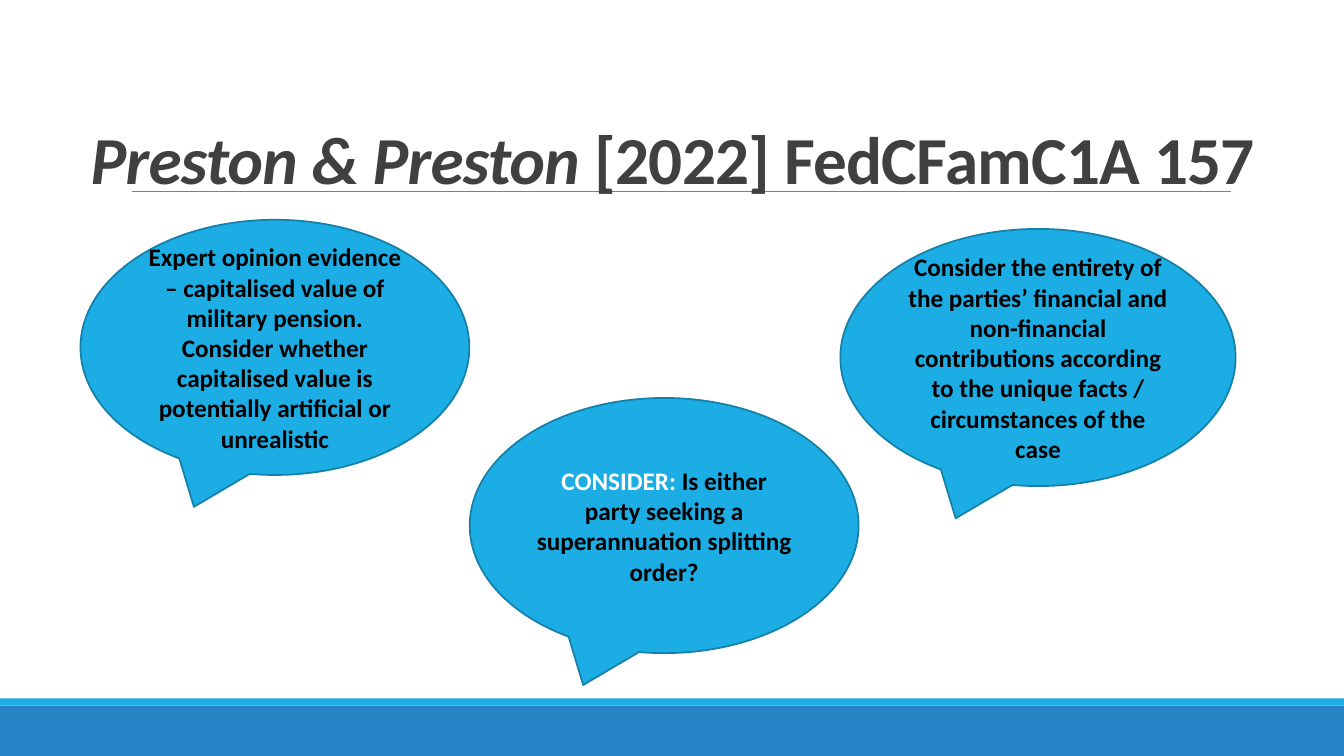
from dataclasses import dataclass

from lxml.etree import SubElement
from pptx import Presentation
from pptx.dml.color import RGBColor
from pptx.enum.shapes import MSO_CONNECTOR, MSO_SHAPE
from pptx.enum.text import MSO_ANCHOR, MSO_AUTO_SIZE, PP_ALIGN
from pptx.oxml.ns import qn
from pptx.slide import Slide
from pptx.text.text import _Paragraph, _Run
from pptx.util import Cm, Pt

COLORS = {
    "blue": "2683C6",
    "cyan": "1CADE4",
    "outline": "1580A9",
    "rule": "808080",
    "title": "404040",
    "black": "000000",
    "white": "FFFFFF",
}
FONT = "Calibri"
WIDTH, HEIGHT = 33.87, 19.05


@dataclass(frozen=True)
class Band:
    top: float
    height: float
    color: str


@dataclass(frozen=True)
class Callout:
    left: float
    top: float
    width: float
    height: float
    runs: tuple[tuple[str, str], ...]


BANDS = (
    Band(17.78, 1.27, "blue"),
    Band(17.6, 0.18, "cyan"),
)
CALLOUTS = (
    Callout(2.03, 5.54, 9.8, 6.43, ((
        "Expert opinion evidence – capitalised value of military pension. "
        "Consider whether capitalised value is potentially artificial or "
        "unrealistic", "black"),)),
    Callout(21.18, 5.77, 9.96, 6.48, ((
        "Consider the entirety of the parties’ financial and non-financial "
        "contributions according to the unique facts / circumstances of the "
        "case", "black"),)),
    Callout(11.84, 10.03, 9.8, 6.43, (
        ("CONSIDER:", "white"),
        (" Is either party seeking a superannuation splitting order?", "black"),
    )),
)


def rgb(name: str) -> RGBColor:
    """Return the named palette colour."""
    return RGBColor.from_string(COLORS[name])


def add_run(p: _Paragraph, text: str, size: float, color: str) -> _Run:
    """Add one bold run to a paragraph."""
    r = p.add_run()
    r.text = text
    r.font.name = FONT
    r.font.size = Pt(size)
    r.font.bold = True
    r.font.color.rgb = rgb(color)
    return r


def add_band(s: Slide, band: Band) -> None:
    """Draw a full-width band at the foot of the slide."""
    sp = s.shapes.add_shape(MSO_SHAPE.RECTANGLE, 0, Cm(band.top),
                            Cm(WIDTH), Cm(band.height))
    sp.shadow.inherit = False
    sp.fill.solid()
    sp.fill.fore_color.rgb = rgb(band.color)
    sp.line.fill.background()


def add_rule(s: Slide) -> None:
    """Draw the thin line under the title."""
    cx = s.shapes.add_connector(MSO_CONNECTOR.STRAIGHT, Cm(3.33), Cm(4.83),
                                Cm(31.01), Cm(4.83))
    cx.line.color.rgb = rgb("rule")
    cx.line.width = Pt(0.5)
    SubElement(cx.element.spPr, qn("a:effectLst"))


def add_title(s: Slide) -> None:
    """Fill the title placeholder and bring it in front of the rule."""
    sp = s.shapes.title
    sp.left, sp.top, sp.width, sp.height = Cm(2.03), Cm(1.07), Cm(31.83), Cm(4.04)
    sp.element.getparent().append(sp.element)
    tf = sp.text_frame
    tf.word_wrap = True
    tf.auto_size = MSO_AUTO_SIZE.NONE
    tf.vertical_anchor = MSO_ANCHOR.BOTTOM
    p = tf.paragraphs[0]
    p.alignment = PP_ALIGN.LEFT
    p.line_spacing = 0.85
    for text, italic in (("Preston & Preston ", True),
                         ("[2022] FedCFamC1A 157", False)):
        r = add_run(p, text, 48, "title")
        r.font.italic = italic
        r.font._element.set("spc", "-50")


def add_callout(s: Slide, callout: Callout) -> None:
    """Draw an oval speech bubble with centred text."""
    sp = s.shapes.add_shape(MSO_SHAPE.OVAL_CALLOUT, Cm(callout.left),
                            Cm(callout.top), Cm(callout.width),
                            Cm(callout.height))
    sp.shadow.inherit = False
    sp.fill.solid()
    sp.fill.fore_color.rgb = rgb("cyan")
    sp.line.color.rgb = rgb("outline")
    sp.line.width = Pt(1.25)
    tf = sp.text_frame
    tf.word_wrap = True
    tf.vertical_anchor = MSO_ANCHOR.MIDDLE
    p = tf.paragraphs[0]
    p.alignment = PP_ALIGN.CENTER
    for text, color in callout.runs:
        add_run(p, text, 18, color)


def main() -> None:
    """Build and save the slide."""
    prs = Presentation()
    prs.slide_width, prs.slide_height = Cm(WIDTH), Cm(HEIGHT)
    s = prs.slides.add_slide(prs.slide_layouts[5])
    for band in BANDS:
        add_band(s, band)
    add_rule(s)
    add_title(s)
    for callout in CALLOUTS:
        add_callout(s, callout)
    prs.save("out.pptx")


if __name__ == "__main__":
    main()
